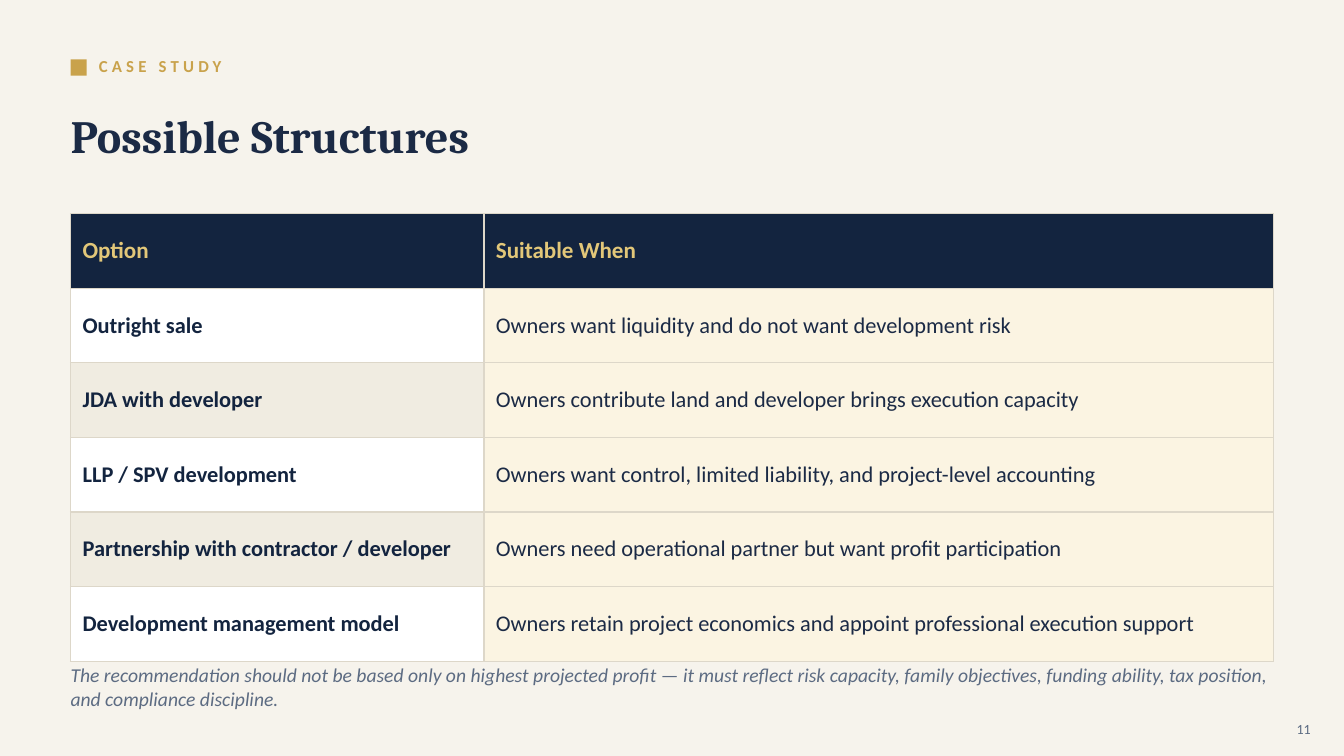
import dataclasses

import lxml.etree
import pptx
import pptx.dml.color
import pptx.enum.shapes
import pptx.enum.text
import pptx.oxml.ns
import pptx.util

Inches = pptx.util.Inches
Align = pptx.enum.text.PP_ALIGN
Anchor = pptx.enum.text.MSO_ANCHOR

NAVY = "13243F"
INK = "1B2A45"
GOLD = "C9A24B"
PALE_GOLD = "E2C779"
CREAM = "FBF4E2"
SLATE = "5C6B82"
BORDER = "DDD7C9"
OPTION_FILLS = ("FFFFFF", "F0ECE1")

LEFT = 0.7
TABLE_TOP = 2.12
ROW_HEIGHT = 0.74
COLUMN_WIDTHS = (4.1, 7.83)

HEADINGS = ("Option", "Suitable When")
STRUCTURES = (
    ("Outright sale", "Owners want liquidity and do not want development risk"),
    ("JDA with developer", "Owners contribute land and developer brings execution capacity"),
    ("LLP / SPV development", "Owners want control, limited liability, and project-level accounting"),
    ("Partnership with contractor / developer", "Owners need operational partner but want profit participation"),
    ("Development management model", "Owners retain project economics and appoint professional execution support"),
)


@dataclasses.dataclass(frozen=True)
class Style:
    size: float
    color: str
    name: str = "Calibri"
    bold: bool = False
    italic: bool = False
    align: Align = Align.LEFT
    spacing: float = 0


@dataclasses.dataclass(frozen=True)
class Label:
    text: str
    left: float
    top: float
    width: float
    height: float
    style: Style
    anchor: Anchor = Anchor.MIDDLE


TITLE = Label("Possible Structures", LEFT, 0.88, 11.95, 0.92, Style(33, INK, "Cambria", bold=True))
LABELS = (
    Label("CASE STUDY", 0.98, 0.48, 9, 0.34, Style(12, GOLD, bold=True, spacing=3)),
    Label(
        "The recommendation should not be based only on highest projected profit — it must reflect "
        "risk capacity, family objectives, funding ability, tax position, and compliance discipline.",
        LEFT, 6.58, 11.9, 0.42, Style(14, SLATE, italic=True), Anchor.TOP,
    ),
    Label("11", 12.4, 7.08, 0.6, 0.3, Style(10, SLATE, align=Align.RIGHT)),
)
HEADING_STYLE = Style(16.5, PALE_GOLD, bold=True)
OPTION_STYLE = Style(16, NAVY, bold=True)
REASON_STYLE = Style(16, INK)


def rgb(value: str) -> pptx.dml.color.RGBColor:
    return pptx.dml.color.RGBColor.from_string(value)


def paint(fill, color: str) -> None:
    fill.solid()
    fill.fore_color.rgb = rgb(color)


def write(frame, text: str, style: Style) -> None:
    para = frame.paragraphs[0]
    span = para.add_run()
    span.text = text
    para.alignment = style.align
    font = para.font
    font.name = style.name
    font.size = pptx.util.Pt(style.size)
    font.bold = style.bold
    font.italic = style.italic
    font.color.rgb = rgb(style.color)
    if style.spacing:
        span.font._element.set("spc", str(round(style.spacing * 100)))


def fill_label(box, label: Label) -> None:
    box.left, box.top = Inches(label.left), Inches(label.top)
    box.width, box.height = Inches(label.width), Inches(label.height)
    frame = box.text_frame
    frame.margin_left = frame.margin_right = frame.margin_top = frame.margin_bottom = 0
    frame.word_wrap = True
    frame.auto_size = pptx.enum.text.MSO_AUTO_SIZE.NONE
    frame.vertical_anchor = label.anchor
    write(frame, label.text, label.style)


def add_borders(cell) -> None:
    properties = cell._tc.get_or_add_tcPr()
    qn = pptx.oxml.ns.qn
    for side in ("a:lnL", "a:lnR", "a:lnT", "a:lnB"):
        line = lxml.etree.SubElement(properties, qn(side), w=str(pptx.util.Pt(1)))
        solid = lxml.etree.SubElement(line, qn("a:solidFill"))
        lxml.etree.SubElement(solid, qn("a:srgbClr"), val=BORDER)


def fill_cell(cell, text: str, style: Style, color: str) -> None:
    add_borders(cell)
    paint(cell.fill, color)
    cell.margin_left = cell.margin_right = Inches(0.12)
    cell.margin_top = cell.margin_bottom = Inches(0.07)
    cell.vertical_anchor = Anchor.MIDDLE
    write(cell.text_frame, text, style)


def add_structures_table(page) -> None:
    row_count = len(STRUCTURES) + 1
    table = page.shapes.add_table(
        row_count, len(HEADINGS), Inches(LEFT), Inches(TABLE_TOP),
        Inches(sum(COLUMN_WIDTHS)), Inches(ROW_HEIGHT * row_count),
    ).table
    table.horz_banding = False
    for column, width in zip(table.columns, COLUMN_WIDTHS):
        column.width = Inches(width)
    for row in table.rows:
        row.height = Inches(ROW_HEIGHT)
    for column, heading in enumerate(HEADINGS):
        fill_cell(table.cell(0, column), heading, HEADING_STYLE, NAVY)
    for index, (option, reason) in enumerate(STRUCTURES):
        fill_cell(table.cell(index + 1, 0), option, OPTION_STYLE, OPTION_FILLS[index % 2])
        fill_cell(table.cell(index + 1, 1), reason, REASON_STYLE, CREAM)


def add_marker(page) -> None:
    marker = page.shapes.add_shape(
        pptx.enum.shapes.MSO_SHAPE.RECTANGLE, Inches(LEFT), Inches(0.59), Inches(0.16), Inches(0.16)
    )
    marker.shadow.inherit = False
    paint(marker.fill, GOLD)
    marker.line.fill.background()


def main() -> None:
    deck = pptx.Presentation()
    deck.slide_width, deck.slide_height = Inches(13.33), Inches(7.5)
    page = deck.slides.add_slide(deck.slide_layouts.get_by_name("Title Only"))
    paint(page.background.fill, "F6F3EC")
    fill_label(page.shapes.title, TITLE)
    add_marker(page)
    add_structures_table(page)
    for label in LABELS:
        fill_label(page.shapes.add_textbox(0, 0, 0, 0), label)
    deck.save("out.pptx")


if __name__ == "__main__":
    main()
